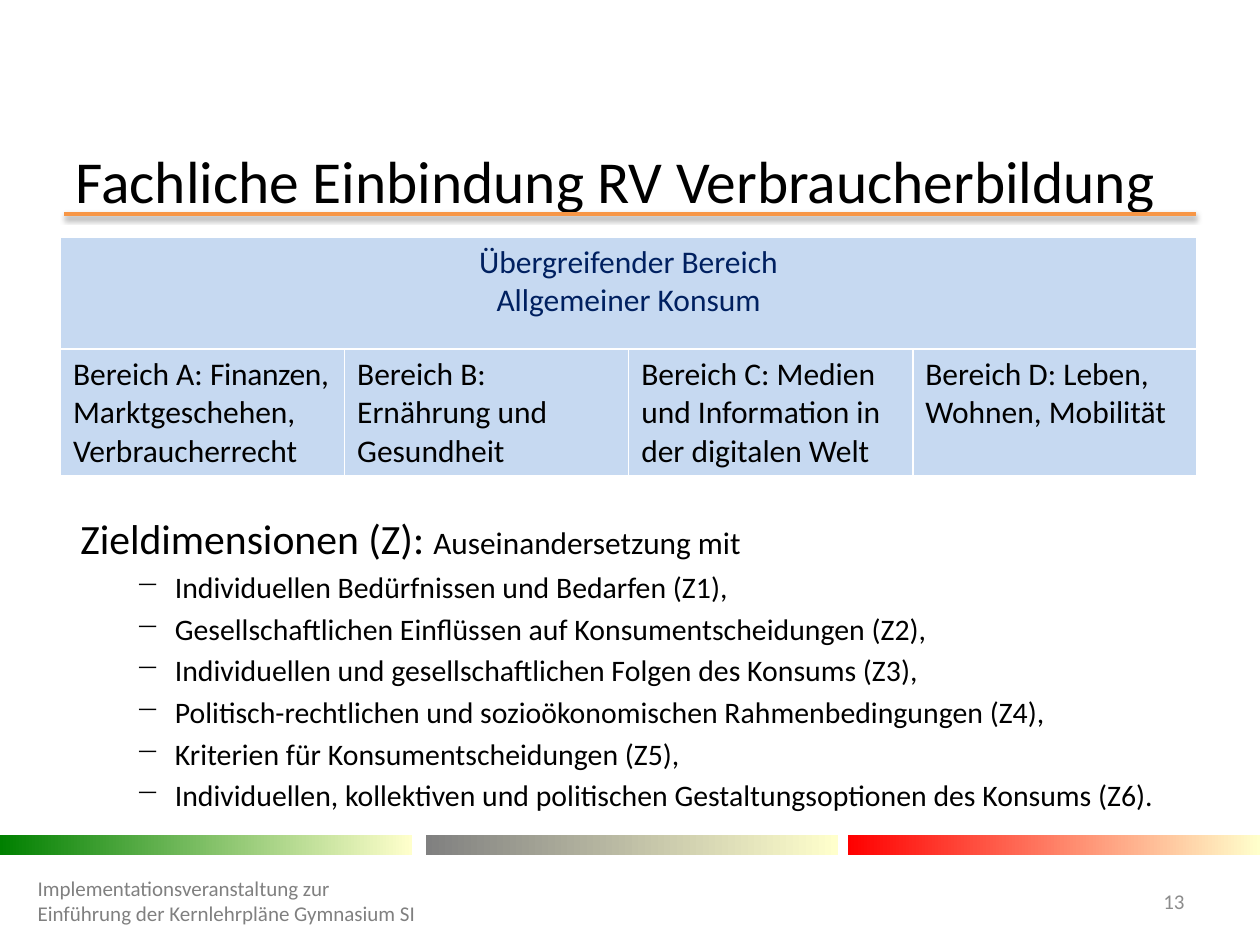
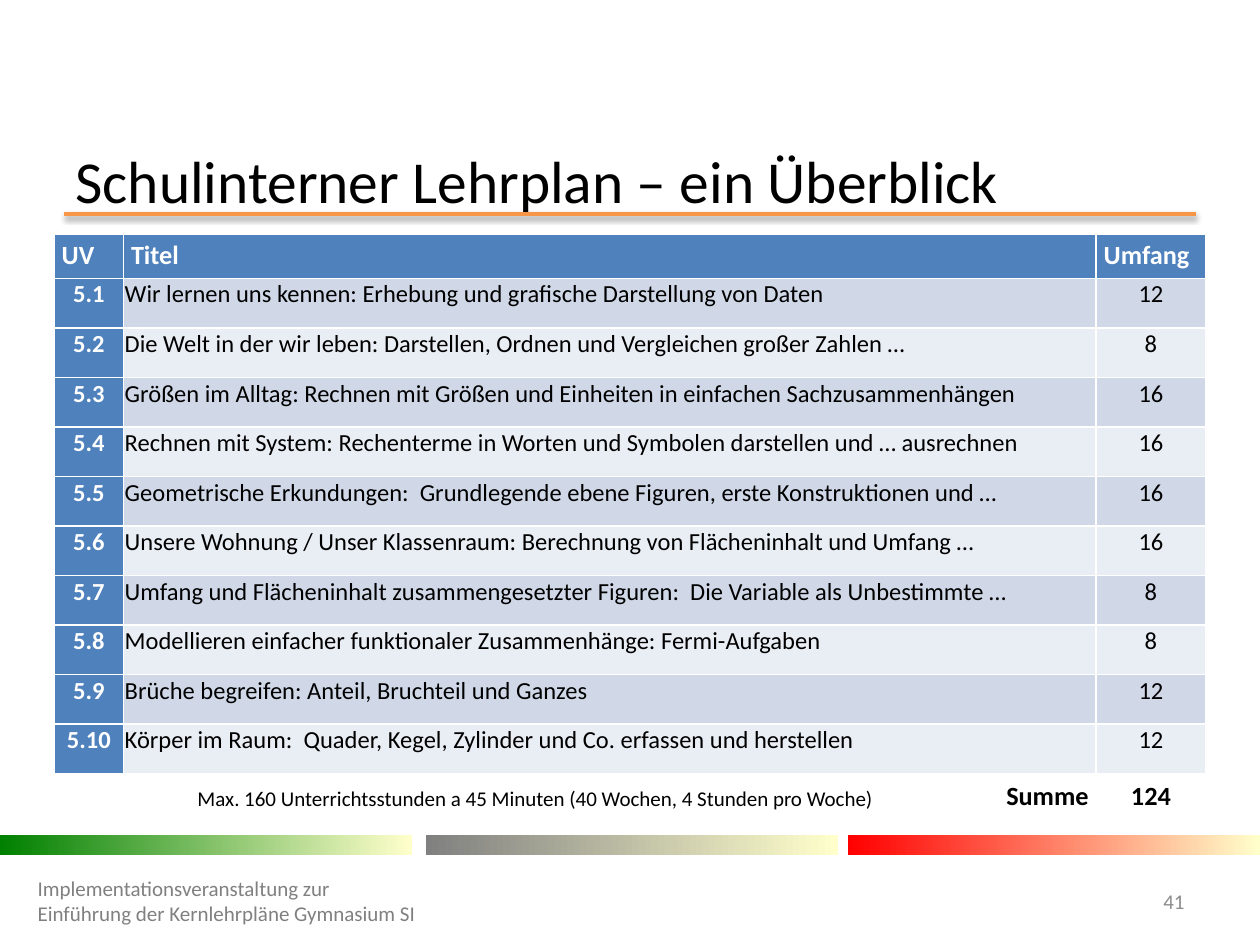
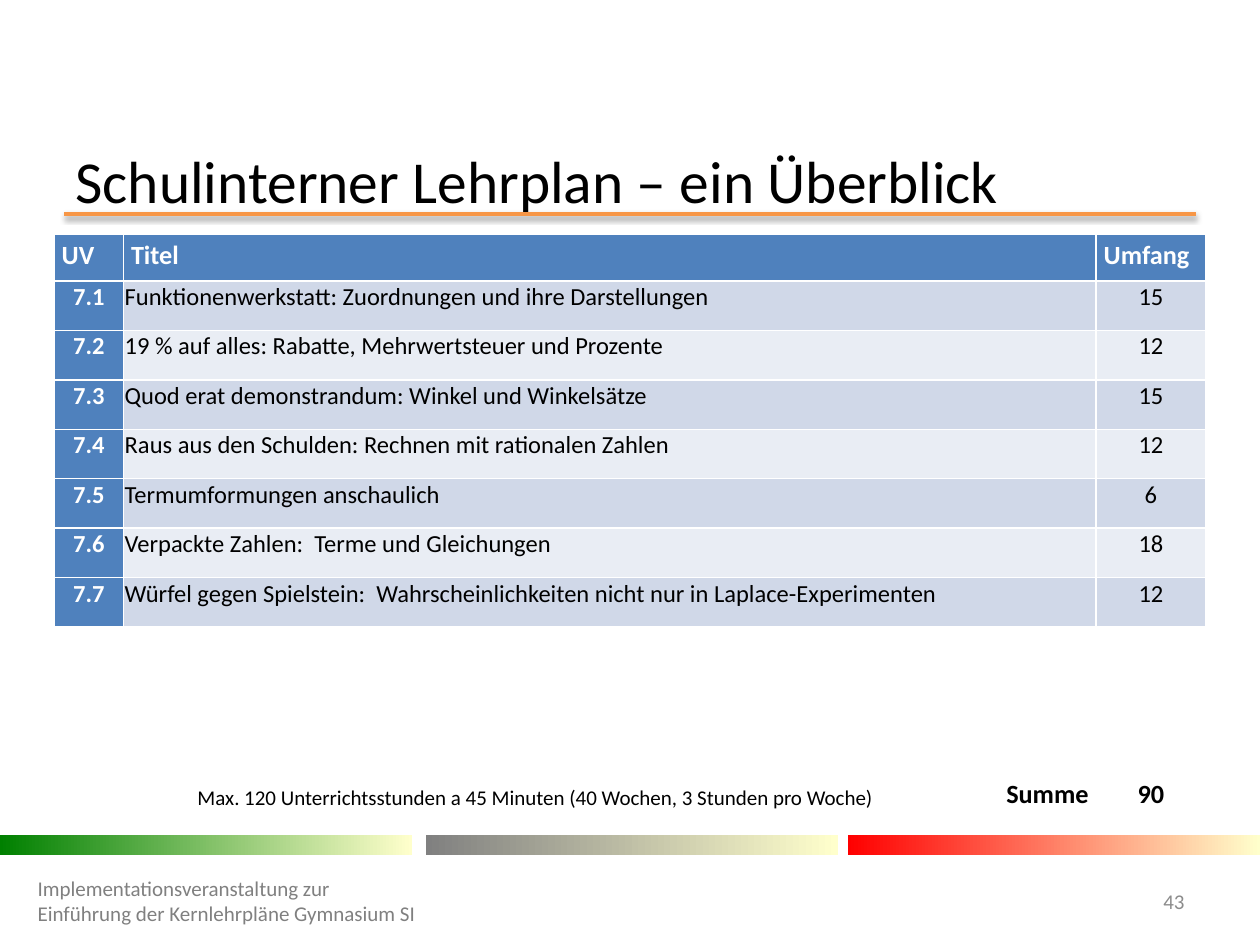
"""Build three slides on consumer education and the school curriculum."""
import lxml.etree
import pptx
import pptx.dml.color
import pptx.enum.shapes
import pptx.enum.text
import pptx.oxml
import pptx.oxml.ns
import pptx.util

Inches = pptx.util.Inches
Pt = pptx.util.Pt
RGBColor = pptx.dml.color.RGBColor
ALIGN = pptx.enum.text.PP_ALIGN
ANCHOR = pptx.enum.text.MSO_ANCHOR
qn = pptx.oxml.ns.qn

FONT = "Calibri"
BLACK = RGBColor(0x00, 0x00, 0x00)
WHITE = RGBColor(0xFF, 0xFF, 0xFF)
ORANGE = RGBColor(0xF7, 0x96, 0x46)
GREEN = RGBColor(0x00, 0x80, 0x00)
GRAY = RGBColor(0x80, 0x80, 0x80)
RED = RGBColor(0xFF, 0x00, 0x00)
CREAM = RGBColor(0xFF, 0xFF, 0xCC)
NUMBER_GRAY = RGBColor(0x8C, 0x8C, 0x8C)
NAVY = RGBColor(0x00, 0x20, 0x60)
AREA_BLUE = RGBColor(0xC6, 0xD9, 0xF1)
HEADER_BLUE = RGBColor(0x4F, 0x81, 0xBD)
BAND_DARK = RGBColor(0xD0, 0xD8, 0xE8)
BAND_LIGHT = RGBColor(0xE9, 0xED, 0xF4)

FOOTER = "Implementationsveranstaltung zur Einführung der Kernlehrpläne Gymnasium SI"
BANDS = [(0, GREEN), (3.38, GRAY), (6.73, RED)]
LINE_SHADOW = (
    '<a:effectLst xmlns:a="http://schemas.openxmlformats.org/drawingml/2006/main">'
    '<a:outerShdw blurRad="39370" dist="20320" dir="5400000" rotWithShape="0">'
    '<a:srgbClr val="000000"><a:alpha val="38000"/></a:srgbClr>'
    "</a:outerShdw></a:effectLst>"
)


def write_text(paragraph, text, *, size, color=BLACK, bold=False, align=ALIGN.LEFT, line_spacing=None):
    """Add a formatted run to the paragraph and return it."""
    paragraph.alignment = align
    paragraph.line_spacing = line_spacing
    run = paragraph.add_run()
    run.text = text
    run.font.name = FONT
    run.font.size = Pt(size)
    run.font.bold = bold
    run.font.color.rgb = color
    return run


def format_cell(cell, fill, *, side=0.1, top=0.05, bottom=0.05, anchor=ANCHOR.TOP):
    """Fill the cell, set its margins and return its first paragraph."""
    cell.fill.solid()
    cell.fill.fore_color.rgb = fill
    cell.margin_left = cell.margin_right = Inches(side)
    cell.margin_top = Inches(top)
    cell.margin_bottom = Inches(bottom)
    cell.vertical_anchor = anchor
    return cell.text_frame.paragraphs[0]


presentation = pptx.Presentation()
presentation.slide_width = Inches(10)
presentation.slide_height = Inches(7.5)

OVERVIEW = "Schulinterner Lehrplan – ein Überblick"
slides = []
for title_text, number in [("Fachliche Einbindung RV Verbraucherbildung", "13"), (OVERVIEW, "41"), (OVERVIEW, "43")]:
    slide = presentation.slides.add_slide(presentation.slide_layouts[5])
    slides.append(slide)

    title = slide.shapes.title
    title.left, title.top, title.width, title.height = Inches(0.5), Inches(1.23), Inches(9), Inches(0.39)
    title.text_frame.auto_size = pptx.enum.text.MSO_AUTO_SIZE.NONE
    title.text_frame.vertical_anchor = ANCHOR.MIDDLE
    write_text(title.text_frame.paragraphs[0], title_text, size=34)

    title_line = slide.shapes.add_connector(
        pptx.enum.shapes.MSO_CONNECTOR.STRAIGHT, Inches(0.51), Inches(1.7), Inches(9.49), Inches(1.7)
    )
    title_line.line.color.rgb = ORANGE
    title_line.line.width = Pt(2)
    title_line._element.spPr.append(pptx.oxml.parse_xml(LINE_SHADOW))

    for left, color in BANDS:
        band = slide.shapes.add_shape(
            pptx.enum.shapes.MSO_SHAPE.RECTANGLE, Inches(left), Inches(6.63), Inches(3.27), Inches(0.16)
        )
        band.shadow.inherit = False
        band.line.fill.background()
        band.fill.gradient()
        band.fill.gradient_angle = 0
        for stop, stop_color in zip(band.fill.gradient_stops, (color, CREAM)):
            stop.color.rgb = stop_color

    for left, width, text, color, align in [
        (0.2, 3.24, FOOTER, GRAY, ALIGN.LEFT),
        (8.86, 0.64, number, NUMBER_GRAY, ALIGN.RIGHT),
    ]:
        footer = slide.shapes.add_textbox(Inches(left), Inches(6.95), Inches(width), Inches(0.4))
        footer.text_frame.word_wrap = True
        footer.text_frame.vertical_anchor = ANCHOR.MIDDLE
        write_text(footer.text_frame.paragraphs[0], text, size=12, color=color, align=align)

areas_slide = slides[0]
areas = areas_slide.shapes.add_table(2, 4, Inches(0.48), Inches(1.88), Inches(9.02), Inches(1.9)).table
areas.rows[0].height = Inches(0.89)
areas.rows[1].height = Inches(1.01)
areas.cell(0, 0).merge(areas.cell(0, 3))
paragraph = format_cell(areas.cell(0, 0), AREA_BLUE)
write_text(paragraph, "Übergreifender Bereich", size=18, color=NAVY, align=ALIGN.CENTER)
paragraph = areas.cell(0, 0).text_frame.add_paragraph()
write_text(paragraph, "Allgemeiner Konsum", size=18, color=NAVY, align=ALIGN.CENTER)

for column, area_runs in enumerate([
    ["Bereich A: ", "Finanzen, ", "Marktgeschehen, Verbraucherrecht"],
    ["Bereich B: Ernährung und Gesundheit"],
    ["Bereich C: Medien und Information in der digitalen Welt"],
    ["Bereich D: Leben, Wohnen, Mobilität"],
]):
    paragraph = format_cell(areas.cell(1, column), AREA_BLUE)
    for text in area_runs:
        run = write_text(paragraph, text, size=18)
        if text == "Finanzen, ":
            run.font._element.set("spc", "-20")

goals = areas_slide.shapes.add_textbox(Inches(0.48), Inches(4.02), Inches(9), Inches(2.57))
goals.fill.solid()
goals.fill.fore_color.rgb = WHITE
goals.text_frame.word_wrap = True
paragraph = goals.text_frame.paragraphs[0]
paragraph._p.get_or_add_pPr().set("marL", str(Inches(0.06)))
write_text(paragraph, "Zieldimensionen (Z): ", size=23.8)
write_text(paragraph, "Auseinandersetzung mit", size=17.9)
for goal in [
    "Individuellen Bedürfnissen und Bedarfen (Z1),",
    "Gesellschaftlichen Einflüssen auf Konsumentscheidungen (Z2),",
    "Individuellen und gesellschaftlichen Folgen des Konsums (Z3),",
    "Politisch-rechtlichen und sozioökonomischen Rahmenbedingungen (Z4),",
    "Kriterien für Konsumentscheidungen (Z5),",
    "Individuellen, kollektiven und politischen Gestaltungsoptionen des Konsums (Z6).",
]:
    paragraph = goals.text_frame.add_paragraph()
    properties = paragraph._p.get_or_add_pPr()
    properties.set("marL", str(Inches(0.81)))
    properties.set("indent", str(Inches(-0.31)))
    lxml.etree.SubElement(properties, qn("a:buChar")).set("char", "−")
    paragraph.space_before = Pt(3.4)
    write_text(paragraph, goal, size=17)

GRADE_FIVE = [
    ("5.1", "Wir lernen uns kennen: Erhebung und grafische Darstellung von Daten", 12),
    ("5.2", "Die Welt in der wir leben: Darstellen, Ordnen und Vergleichen großer Zahlen …", 8),
    ("5.3", "Größen im Alltag: Rechnen mit Größen und Einheiten in einfachen Sachzusammenhängen", 16),
    ("5.4", "Rechnen mit System: Rechenterme in Worten und Symbolen darstellen und … ausrechnen", 16),
    ("5.5", "Geometrische Erkundungen:  Grundlegende ebene Figuren, erste Konstruktionen und …", 16),
    ("5.6", "Unsere Wohnung / Unser Klassenraum: Berechnung von Flächeninhalt und Umfang …", 16),
    ("5.7", "Umfang und Flächeninhalt zusammengesetzter Figuren:  Die Variable als Unbestimmte …", 8),
    ("5.8", "Modellieren einfacher funktionaler Zusammenhänge: Fermi-Aufgaben", 8),
    ("5.9", "Brüche begreifen: Anteil, Bruchteil und Ganzes", 12),
    ("5.10", "Körper im Raum:  Quader, Kegel, Zylinder und Co. erfassen und herstellen", 12),
]
GRADE_SEVEN = [
    ("7.1", "Funktionenwerkstatt: Zuordnungen und ihre Darstellungen", 15),
    ("7.2", "19 % auf alles: Rabatte, Mehrwertsteuer und Prozente", 12),
    ("7.3", "Quod erat demonstrandum: Winkel und Winkelsätze", 15),
    ("7.4", "Raus aus den Schulden: Rechnen mit rationalen Zahlen", 12),
    ("7.5", "Termumformungen anschaulich", 6),
    ("7.6", "Verpackte Zahlen:  Terme und Gleichungen", 18),
    ("7.7", "Würfel gegen Spielstein:  Wahrscheinlichkeiten nicht nur in Laplace-Experimenten", 12),
]

for slide, units, limit, table_height, header_height, sum_height in [
    (slides[1], GRADE_FIVE, "Max. 160 Unterrichtsstunden a 45 Minuten (40 Wochen, 4 Stunden pro Woche)", 4.59, 0.35, 0.31),
    (slides[2], GRADE_SEVEN, "Max. 120 Unterrichtsstunden a 45 Minuten (40 Wochen, 3 Stunden pro Woche)", 4.58, 0.37, 1.46),
]:
    sum_row = len(units) + 1
    plan = slide.shapes.add_table(
        sum_row + 1, 4, Inches(0.43), Inches(1.86), Inches(9.13), Inches(table_height)
    ).table
    for column, width in zip(plan.columns, (0.55, 6.54, 1.18, 0.87)):
        column.width = Inches(width)
    unit_height = (table_height - header_height - sum_height) / len(units)
    for row, height in zip(plan.rows, [header_height] + [unit_height] * len(units) + [sum_height]):
        row.height = Inches(height)
    for row_index in range(sum_row):
        plan.cell(row_index, 1).merge(plan.cell(row_index, 2))

    for column_index, heading in [(0, "UV"), (1, "Titel"), (3, "Umfang")]:
        paragraph = format_cell(plan.cell(0, column_index), HEADER_BLUE, side=0.06, top=0, bottom=0)
        write_text(paragraph, heading, size=15, color=WHITE, bold=True, line_spacing=1.15)

    for row_index, (unit, topic, hours) in enumerate(units, start=1):
        band_color = BAND_DARK if row_index % 2 else BAND_LIGHT
        for column_index, text, fill, color, align in [
            (0, unit, HEADER_BLUE, WHITE, ALIGN.CENTER),
            (1, topic, band_color, BLACK, ALIGN.LEFT),
            (3, str(hours), band_color, BLACK, ALIGN.CENTER),
        ]:
            paragraph = format_cell(plan.cell(row_index, column_index), fill, side=0.01, top=0.01, bottom=0)
            write_text(paragraph, text, size=14, color=color, bold=column_index == 0, align=align)

    total = str(sum(hours for unit, topic, hours in units))
    format_cell(plan.cell(sum_row, 0), WHITE, side=0, top=0, bottom=0)
    for column_index, text, size, align in [
        (1, limit, 12, ALIGN.CENTER),
        (2, "Summe", 15, ALIGN.RIGHT),
        (3, total, 15, ALIGN.CENTER),
    ]:
        paragraph = format_cell(
            plan.cell(sum_row, column_index), WHITE, side=0.06, top=0, bottom=0, anchor=ANCHOR.BOTTOM
        )
        write_text(paragraph, text, size=size, bold=column_index > 1, align=align, line_spacing=1.15)

presentation.save("out.pptx")
